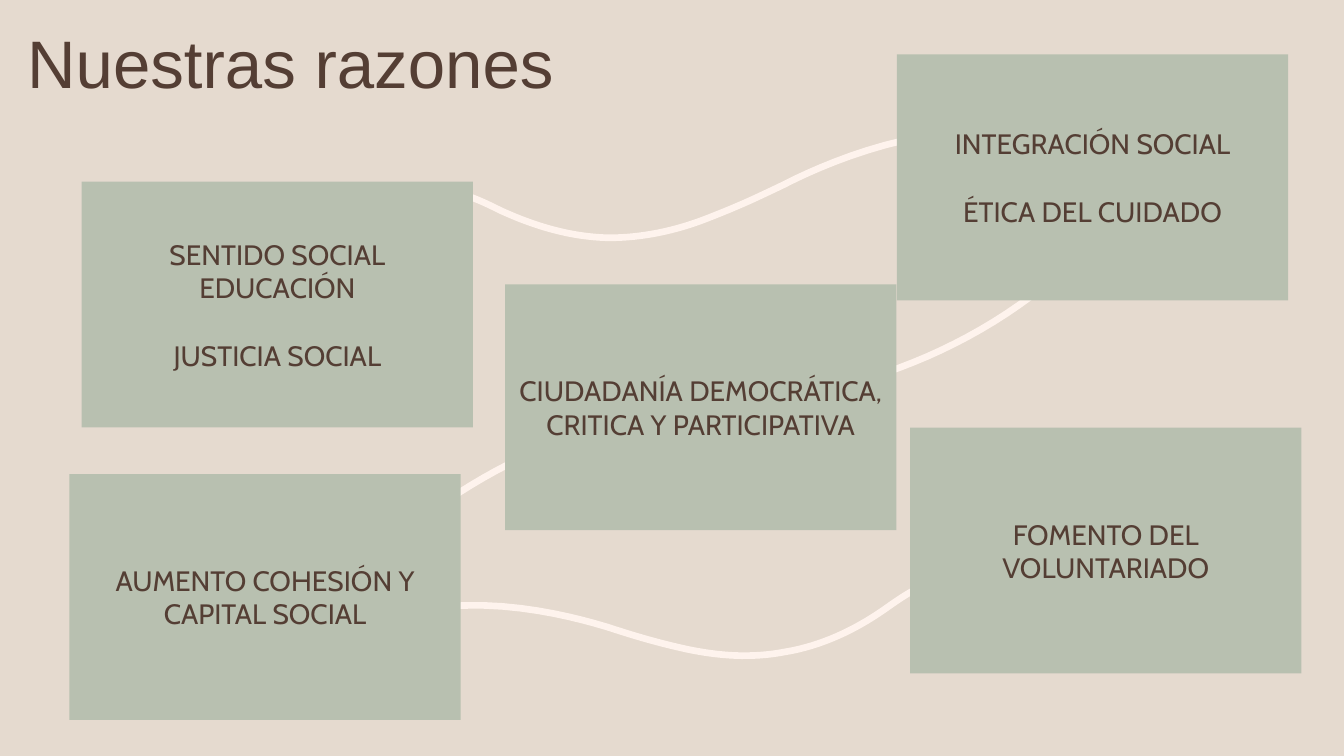
from dataclasses import dataclass

from pptx import Presentation
from pptx.dml.color import RGBColor
from pptx.enum.shapes import MSO_SHAPE
from pptx.enum.text import MSO_ANCHOR, MSO_AUTO_SIZE, PP_ALIGN
from pptx.slide import Slide
from pptx.util import Pt

RECTANGLE = MSO_SHAPE.RECTANGLE
MIDDLE = MSO_ANCHOR.MIDDLE
CENTER, LEFT = PP_ALIGN.CENTER, PP_ALIGN.LEFT
NO_AUTOFIT = MSO_AUTO_SIZE.NONE

SAND = RGBColor(0xE5, 0xDA, 0xCF)
SAGE = RGBColor(0xB8, 0xC0, 0xB0)
CREAM = RGBColor(0xFE, 0xF3, 0xED)
BROWN = RGBColor(0x54, 0x3E, 0x34)

BOX_WIDTH, BOX_HEIGHT = 279.5, 175.6
STEPS_PER_CURVE = 16

Point = tuple[float, float]


@dataclass(frozen=True)
class Reason:
    left: float
    top: float
    paragraphs: tuple[str, ...]


@dataclass(frozen=True)
class Ribbon:
    """A start point followed by three Bézier points per curve."""
    points: tuple[Point, ...]


REASONS = (
    Reason(640.7, 38.9, ("INTEGRACIÓN SOCIAL", "ÉTICA DEL CUIDADO")),
    Reason(58.4, 129.7, ("SENTIDO SOCIAL EDUCACIÓN", "JUSTICIA SOCIAL")),
    Reason(360.8, 203.1, ("CIUDADANÍA DEMOCRÁTICA, CRITICA Y PARTICIPATIVA",)),
    Reason(650.1, 305.5, ("FOMENTO DEL VOLUNTARIADO",)),
    Reason(49.6, 338.6, ("AUMENTO COHESIÓN Y CAPITAL SOCIAL",)),
)

RIBBONS = (
    Ribbon(((600, 275.8), (657.4, 261.4), (709.2, 235.4), (753.8, 198))),
    Ribbon(((420.5, 308.2), (366.5, 325.4), (320.4, 352.8), (280.1, 388.1))),
    Ribbon((
        (221, 160.6),
        (252, 134.6), (286.6, 127.4), (323.3, 136.8),
        (335.5, 139.7), (346.3, 144.7), (357.8, 150.5),
        (381.6, 161.3), (406.8, 169.2), (434.9, 169.9),
        (458.6, 169.9), (482.4, 164.9), (504.7, 156.2),
        (530.6, 146.2), (545, 139), (560.2, 131.8),
        (576.7, 123.1), (676.8, 74.2), (739.4, 105.1),
    )),
    Ribbon((
        (662.4, 416.9),
        (650.9, 421.9), (641.5, 428.4), (631.4, 435.6),
        (610.6, 450), (586.8, 461.5), (560.2, 465.8),
        (537.1, 470.2), (514.1, 468.7), (490.3, 463.7),
        (464.4, 457.9), (449.3, 452.9), (433.4, 447.8),
        (416.2, 442.8), (312.5, 410.4), (249.8, 457.9),
    )),
)


def bezier_point(curve: tuple[Point, ...], t: float) -> Point:
    weights = ((1 - t) ** 3, 3 * t * (1 - t) ** 2, 3 * t ** 2 * (1 - t), t ** 3)
    x, y = (sum(weight * value for weight, value in zip(weights, axis))
            for axis in zip(*curve))
    return Pt(x), Pt(y)


def add_ribbon(slide: Slide, ribbon: Ribbon) -> None:
    start_x, start_y = ribbon.points[0]
    builder = slide.shapes.build_freeform(Pt(start_x), Pt(start_y))
    for first in range(0, len(ribbon.points) - 1, 3):
        curve = ribbon.points[first:first + 4]
        builder.add_line_segments(
            [bezier_point(curve, step / STEPS_PER_CURVE)
             for step in range(1, STEPS_PER_CURVE + 1)],
            close=False,
        )
    shape = builder.convert_to_shape()
    shape.shadow.inherit = False
    shape.fill.background()
    shape.line.color.rgb = CREAM
    shape.line.width = Pt(4.75)


def add_reason(slide: Slide, reason: Reason) -> None:
    shape = slide.shapes.add_shape(
        RECTANGLE, Pt(reason.left), Pt(reason.top), Pt(BOX_WIDTH), Pt(BOX_HEIGHT))
    shape.shadow.inherit = False
    shape.fill.solid()
    shape.fill.fore_color.rgb = SAGE
    shape.line.fill.background()
    frame = shape.text_frame
    frame.word_wrap = True
    frame.vertical_anchor = MIDDLE
    for index, text in enumerate(reason.paragraphs):
        paragraph = frame.add_paragraph() if index else frame.paragraphs[0]
        paragraph.text = text
        paragraph.alignment = CENTER
        if index:
            paragraph.space_before = Pt(24)
        paragraph.font.name = "Cabin"
        paragraph.font.size = Pt(20)
        paragraph.font.color.rgb = BROWN


def format_title(slide: Slide, text: str) -> None:
    title = slide.shapes.title
    title.left, title.top, title.width, title.height = (
        Pt(12.2), Pt(20.9), Pt(424.8), Pt(53.3))
    frame = title.text_frame
    frame.text = text
    frame.word_wrap = True
    frame.auto_size = NO_AUTOFIT
    frame.vertical_anchor = MIDDLE
    paragraph = frame.paragraphs[0]
    paragraph.alignment = LEFT
    paragraph.line_spacing = 0.9
    paragraph.font.name = "Arial"
    paragraph.font.size = Pt(48)
    paragraph.font.color.rgb = BROWN


def main() -> None:
    presentation = Presentation()
    presentation.slide_width, presentation.slide_height = Pt(960), Pt(540)
    slide = presentation.slides.add_slide(presentation.slide_layouts[5])
    slide.background.fill.solid()
    slide.background.fill.fore_color.rgb = SAND
    format_title(slide, "Nuestras razones")
    for ribbon in RIBBONS:
        add_ribbon(slide, ribbon)
    for reason in REASONS:
        add_reason(slide, reason)
    presentation.save("out.pptx")


if __name__ == "__main__":
    main()
